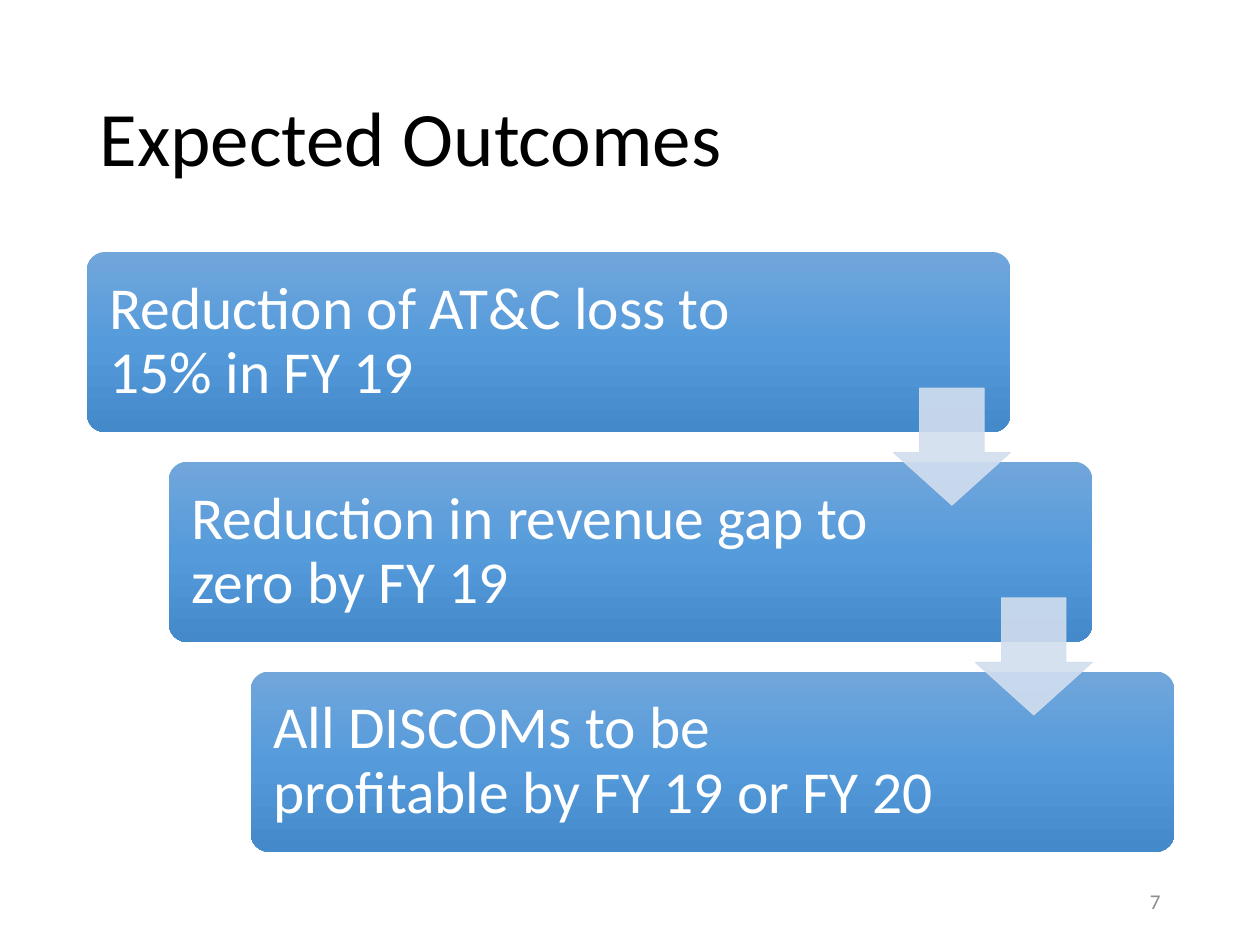
from copy import deepcopy
from dataclasses import dataclass

from lxml.etree import SubElement
from pptx import Presentation
from pptx.dml.color import RGBColor
from pptx.enum.shapes import MSO_SHAPE
from pptx.enum.text import MSO_ANCHOR, MSO_AUTO_SIZE, PP_ALIGN
from pptx.oxml.ns import qn
from pptx.util import Inches, Pt


@dataclass(frozen=True)
class Theme:
    font: str = "Calibri"
    title_size: int = 44
    step_size: int = 34
    number_size: int = 12
    title_color: str = "000000"
    step_color: str = "FFFFFF"
    number_color: str = "8C8C8C"
    card_gradient: tuple = ("71A6DB", "559BDB", "448ACA")
    arrow_color: str = "D2DEEF"
    arrow_opacity: int = 90


THEME = Theme()
STEPS = (
    ("Reduction of AT&C loss to 15% in FY 19", 5.79),
    ("Reduction in revenue gap to zero by FY 19", 5.67),
    ("All DISCOMs to be profitable by FY 19 or FY 20", 5.67),
)
CARD_LEFT, CARD_TOP = 0.69, 2
CARD_WIDTH, CARD_HEIGHT = 7.33, 1.43
STEP_RIGHT, STEP_DOWN = 0.65, 1.665
TEXT_MARGIN = 0.04
TEXT_INSET = 0.14
ARROW_SIZE = 0.93
ARROW_LEFT, ARROW_TOP = CARD_LEFT + CARD_WIDTH - ARROW_SIZE, 3.08


def inches(*lengths):
    return [Inches(length) for length in lengths]


def write_text(frame, text, size, color, align=PP_ALIGN.LEFT, line_spacing=0.9):
    frame.text = text
    frame.word_wrap = True
    frame.auto_size = MSO_AUTO_SIZE.NONE
    frame.vertical_anchor = MSO_ANCHOR.MIDDLE
    paragraph = frame.paragraphs[0]
    paragraph.alignment = align
    paragraph.line_spacing = line_spacing
    font = paragraph.runs[0].font
    font.name = THEME.font
    font.size = Pt(size)
    font.color.rgb = RGBColor.from_string(color)


def add_title(slide, text):
    title = slide.shapes.title
    title.left, title.top, title.width, title.height = inches(0.69, 0.4, 8.62, 1.45)
    write_text(title.text_frame, text, THEME.title_size, THEME.title_color)


def fill_card(card):
    card.fill.gradient()
    card.fill.gradient_angle = 270
    first_stop = card.fill.gradient_stops[0]
    first_stop_xml = card._element.spPr.find(".//" + qn("a:gs"))
    first_stop_xml.addnext(deepcopy(first_stop_xml))
    first_stop.position = 0
    stops = card.fill.gradient_stops
    for stop, position, color in zip(stops, (0, 0.5, 1), THEME.card_gradient):
        stop.position = position
        stop.color.rgb = RGBColor.from_string(color)


def add_step(slide, index, text, text_width):
    left = CARD_LEFT + index * STEP_RIGHT
    top = CARD_TOP + index * STEP_DOWN
    card = slide.shapes.add_shape(
        MSO_SHAPE.ROUNDED_RECTANGLE, *inches(left, top, CARD_WIDTH, CARD_HEIGHT)
    )
    card.adjustments[0] = 0.1
    card.shadow.inherit = False
    card.line.fill.background()
    fill_card(card)

    label = slide.shapes.add_textbox(
        *inches(left + TEXT_MARGIN, top + TEXT_MARGIN,
                text_width, CARD_HEIGHT - 2 * TEXT_MARGIN)
    )
    frame = label.text_frame
    frame.margin_left = frame.margin_right = Inches(TEXT_INSET)
    frame.margin_top = frame.margin_bottom = Inches(TEXT_INSET)
    write_text(frame, text, THEME.step_size, THEME.step_color)


def add_arrow(slide, index):
    arrow = slide.shapes.add_shape(
        MSO_SHAPE.DOWN_ARROW,
        *inches(ARROW_LEFT + index * STEP_RIGHT, ARROW_TOP + index * STEP_DOWN,
                ARROW_SIZE, ARROW_SIZE),
    )
    arrow.adjustments[0] = 0.55
    arrow.adjustments[1] = 0.45
    arrow.shadow.inherit = False
    arrow.line.width = Pt(0.5)
    for fill in (arrow.fill, arrow.line.fill):
        fill.solid()
        fill.fore_color.rgb = RGBColor.from_string(THEME.arrow_color)
    for color in arrow._element.spPr.iter(qn("a:srgbClr")):
        SubElement(color, qn("a:alpha"), val=str(THEME.arrow_opacity * 1000))


def add_slide_number(slide, number):
    box = slide.shapes.add_textbox(*inches(7.06, 6.95, 2.25, 0.4))
    write_text(box.text_frame, number, THEME.number_size, THEME.number_color,
               PP_ALIGN.RIGHT, 1.0)


def main():
    presentation = Presentation()
    presentation.slide_width, presentation.slide_height = inches(10, 7.5)
    slide = presentation.slides.add_slide(presentation.slide_layouts[5])
    add_title(slide, "Expected Outcomes")
    for index, (text, text_width) in enumerate(STEPS):
        add_step(slide, index, text, text_width)
    for index in range(len(STEPS) - 1):
        add_arrow(slide, index)
    add_slide_number(slide, "7")
    presentation.save("out.pptx")


if __name__ == "__main__":
    main()
